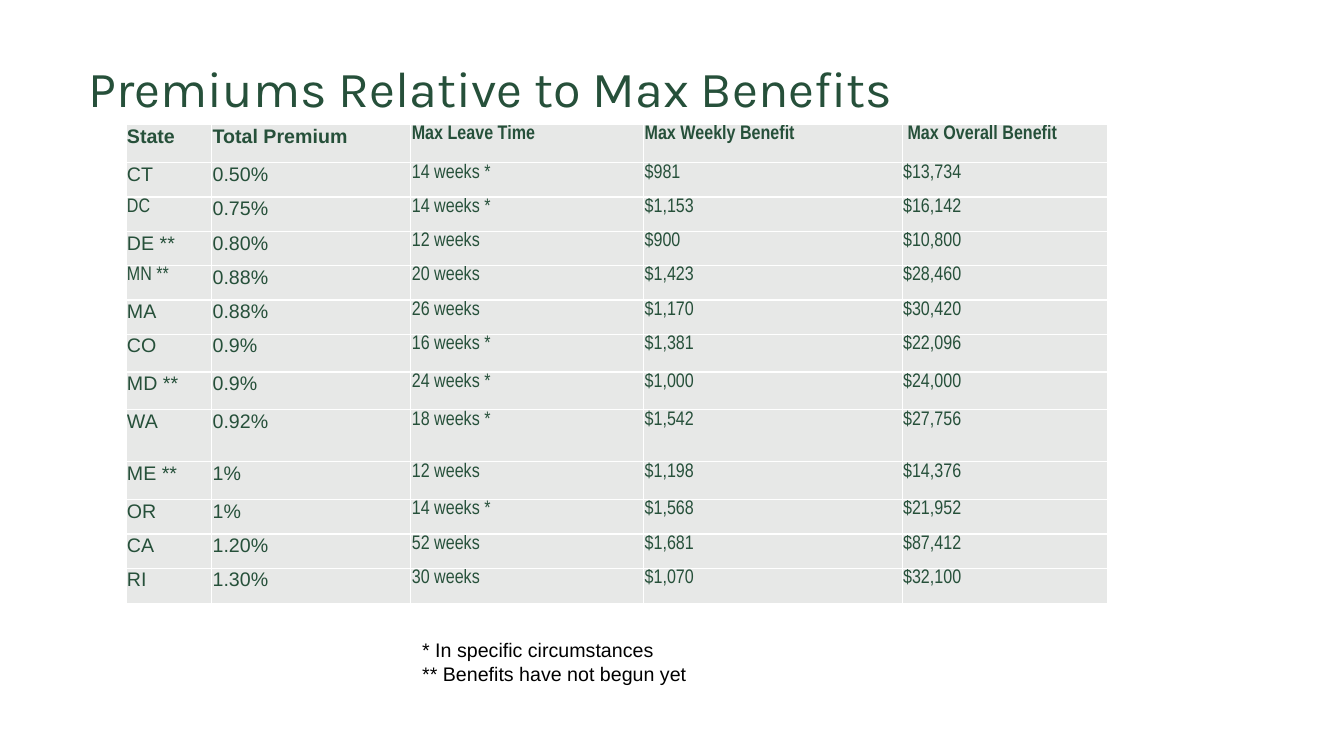
from lxml import etree
from pptx import Presentation
from pptx.dml.color import RGBColor
from pptx.enum.text import MSO_ANCHOR, MSO_AUTO_SIZE, PP_ALIGN
from pptx.oxml.ns import qn
from pptx.util import Pt

GREEN = RGBColor(0x26, 0x50, 0x3A)
GREY = RGBColor(0xE7, 0xE8, 0xE7)
WHITE = RGBColor(0xFF, 0xFF, 0xFF)
BLACK = RGBColor(0x00, 0x00, 0x00)
LEFT = PP_ALIGN.LEFT
TOP = MSO_ANCHOR.TOP
MIDDLE = MSO_ANCHOR.MIDDLE
NO_AUTOFIT = MSO_AUTO_SIZE.NONE
GROW = MSO_AUTO_SIZE.SHAPE_TO_FIT_TEXT

TITLE_LAYOUT = 5
WIDE, NARROW = "Arial", "Arial Narrow"
COLUMN_FONTS = [WIDE, WIDE, NARROW, NARROW, NARROW]
NARROW_STATES = ("DC", "MN **")
COLUMN_WIDTHS = [61.2, 142.3, 166.3, 184.6, 146.9]
BASE_HEIGHT = 24.5
ROW_HEIGHTS = {"State": 27.4, "CO": 27, "MD **": 27, "WA": 37.2, "ME **": 27, "RI": 25.5}

PREMIUMS = [
    ("State", "Total Premium", "Max Leave Time", "Max Weekly Benefit", " Max Overall Benefit"),
    ("CT", "0.50%", "14 weeks *", "$981", "$13,734"),
    ("DC", "0.75%", "14 weeks *", "$1,153", "$16,142"),
    ("DE **", "0.80%", "12 weeks", "$900", "$10,800"),
    ("MN **", "0.88%", "20 weeks", "$1,423", "$28,460"),
    ("MA", "0.88%", "26 weeks", "$1,170", "$30,420"),
    ("CO", "0.9%", "16 weeks *", "$1,381", "$22,096"),
    ("MD **", "0.9%", "24 weeks *", "$1,000", "$24,000"),
    ("WA", "0.92%", "18 weeks *", "$1,542", "$27,756"),
    ("ME **", "1%", "12 weeks", "$1,198", "$14,376"),
    ("OR", "1%", "14 weeks *", "$1,568", "$21,952"),
    ("CA", "1.20%", "52 weeks", "$1,681", "$87,412"),
    ("RI", "1.30%", "30 weeks", "$1,070", "$32,100"),
]


def set_attributes(target, values):
    for name, value in values.items():
        setattr(target, name, value)


class SlideBuilder:
    def __init__(self, slide, color):
        self.slide = slide
        self.color = color

    def add_text(self, paragraph, text, font, size, color=None, bold=False):
        paragraph.alignment = LEFT
        run = paragraph.add_run()
        run.text = text
        set_attributes(run.font, {"name": font, "size": Pt(size), "bold": bold})
        run.font.color.rgb = color or self.color

    def title(self, text, left, top, width, height):
        shape = self.slide.shapes.title
        set_attributes(shape, {"left": Pt(left), "top": Pt(top),
                               "width": Pt(width), "height": Pt(height)})
        set_attributes(shape.text_frame, {"vertical_anchor": MIDDLE, "word_wrap": True,
                                          "auto_size": NO_AUTOFIT})
        paragraph = shape.text_frame.paragraphs[0]
        paragraph.line_spacing = 0.9
        self.add_text(paragraph, text, "Karla", 36)

    def border(self, cell):
        properties = cell._tc.get_or_add_tcPr()
        for index, side in enumerate(("lnL", "lnR", "lnT", "lnB")):
            line = etree.Element(qn(f"a:{side}"), w=str(Pt(1)))
            fill = etree.SubElement(line, qn("a:solidFill"))
            etree.SubElement(fill, qn("a:srgbClr"), val=str(WHITE))
            properties.insert(index, line)

    def cell(self, cell, text, font, bold):
        set_attributes(cell, {"margin_left": Pt(0.7), "margin_top": Pt(0.7),
                              "margin_right": Pt(0.7), "margin_bottom": Pt(0),
                              "vertical_anchor": TOP})
        cell.fill.solid()
        cell.fill.fore_color.rgb = GREY
        self.border(cell)
        self.add_text(cell.text_frame.paragraphs[0], text, font, 14, bold=bold)

    def table(self, rows, left, top):
        heights = [ROW_HEIGHTS.get(row[0], BASE_HEIGHT) for row in rows]
        frame = self.slide.shapes.add_table(
            len(rows), len(COLUMN_WIDTHS), Pt(left), Pt(top),
            Pt(sum(COLUMN_WIDTHS)), Pt(sum(heights)))
        table = frame.table
        set_attributes(table, {"first_row": False, "horz_banding": False})
        for column, width in zip(table.columns, COLUMN_WIDTHS):
            column.width = Pt(width)
        for row_index, (values, height) in enumerate(zip(rows, heights)):
            table.rows[row_index].height = Pt(height)
            for column_index, (text, font) in enumerate(zip(values, COLUMN_FONTS)):
                self.cell(table.cell(row_index, column_index), text,
                          NARROW if text in NARROW_STATES else font, row_index == 0)

    def footnotes(self, lines, left, top, width, height):
        shape = self.slide.shapes.add_textbox(Pt(left), Pt(top), Pt(width), Pt(height))
        frame = shape.text_frame
        set_attributes(frame, {"word_wrap": True, "auto_size": GROW})
        for index, text in enumerate(lines):
            paragraph = frame.add_paragraph() if index else frame.paragraphs[0]
            self.add_text(paragraph, text, WIDE, 14, BLACK)


def main():
    presentation = Presentation()
    set_attributes(presentation, {"slide_width": Pt(960), "slide_height": Pt(540)})
    slide = presentation.slides.add_slide(presentation.slide_layouts[TITLE_LAYOUT])
    builder = SlideBuilder(slide, GREEN)
    builder.title("Premiums Relative to Max Benefits", 56.2, 25.2, 828, 80.6)
    builder.table(PREMIUMS, 90, 88.9)
    builder.footnotes(["* In specific circumstances", "** Benefits have not begun yet"],
                      294.5, 452.2, 313.9, 41)
    presentation.save("out.pptx")


if __name__ == "__main__":
    main()
